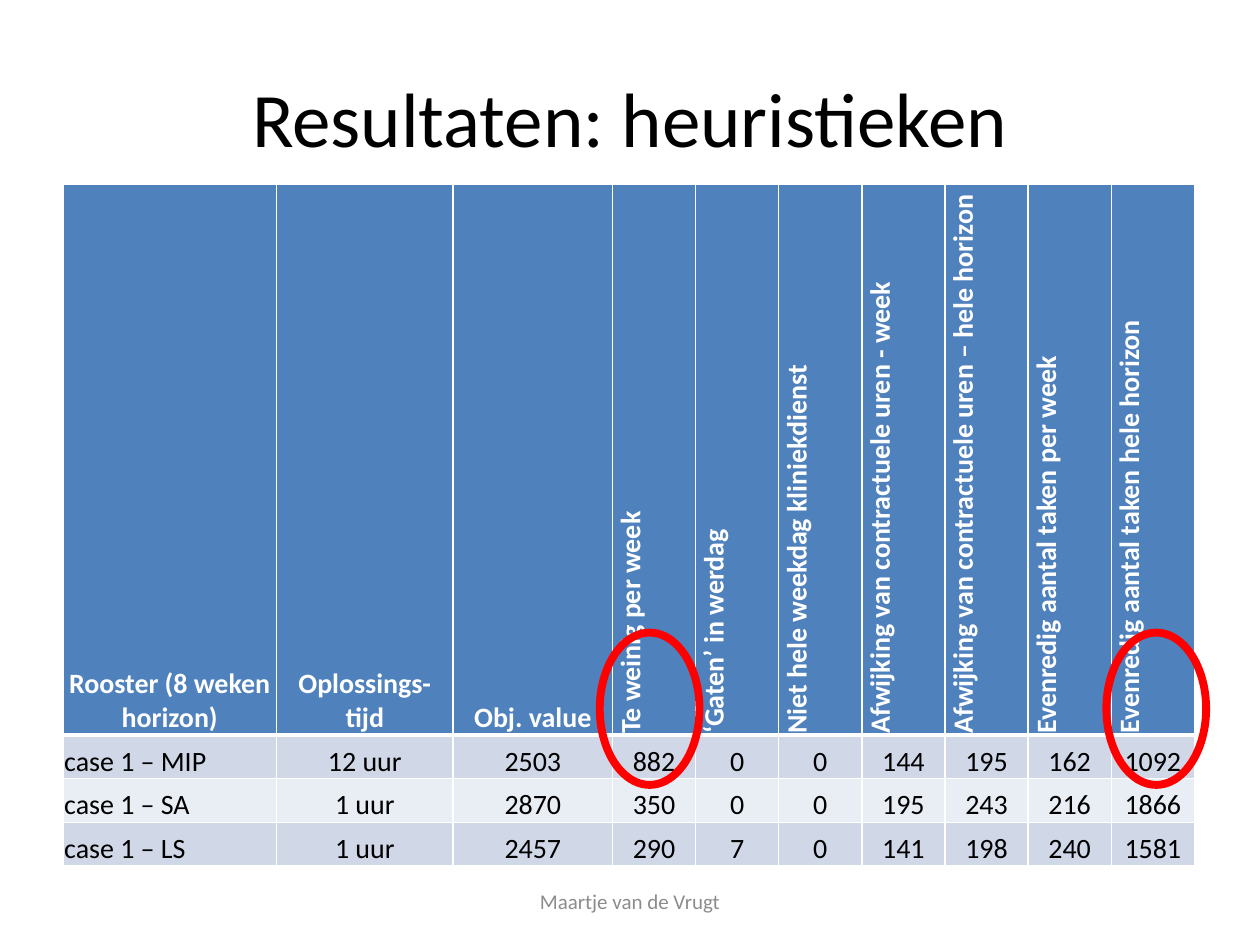
from dataclasses import dataclass

from lxml.etree import SubElement
from pptx import Presentation
from pptx.dml.color import RGBColor
from pptx.enum.shapes import MSO_SHAPE
from pptx.enum.text import MSO_ANCHOR, PP_ALIGN
from pptx.oxml.ns import qn
from pptx.util import Pt

FONT = "Calibri"
BLACK, WHITE, GREY, RED = "000000", "FFFFFF", "8C8C8C", "FF0000"
HEADER_FILL, BAND_FILLS = "4F81BD", ("D0D8E8", "E9EDF4")
THIN, THICK = 1, 3


@dataclass
class Box:
    left: float
    top: float
    width: float
    height: float

    def lengths(self) -> tuple:
        return Pt(self.left), Pt(self.top), Pt(self.width), Pt(self.height)


@dataclass
class Column:
    heading: str
    width: float
    values: tuple
    vertical: bool = False


def criterion(heading: str, *values: str) -> Column:
    return Column(heading, 47.52, values, vertical=True)


COLUMNS = [
    Column("Rooster (8 weken horizon)", 122, ("case 1 – MIP", "case 1 – SA", "case 1 – LS")),
    Column("Oplossings- tijd", 101, ("12 uur", "1 uur", "1 uur")),
    Column("Obj. value", 91, ("2503", "2870", "2457")),
    criterion("Te weinig per week", "882", "350", "290"),
    criterion("‘Gaten’ in werdag", "0", "0", "7"),
    criterion("Niet hele weekdag kliniekdienst", "0", "0", "0"),
    criterion("Afwijking van contractuele uren - week", "144", "195", "141"),
    criterion("Afwijking van contractuele uren – hele horizon", "195", "243", "198"),
    criterion("Evenredig aantal taken per week", "162", "216", "240"),
    criterion("Evenredig aantal taken hele horizon", "1092", "1866", "1581"),
]
ROW_HEIGHTS = [260, 25, 25, 25]
TABLE_BOX = Box(36, 105.5, sum(column.width for column in COLUMNS), sum(ROW_HEIGHTS))
HIGHLIGHTS = [Box(left, 361.5, 57, 87) for left in (342.7, 632.2)]


def color(hex_code: str) -> RGBColor:
    return RGBColor.from_string(hex_code)


def write(frame, text: str, size: float, hex_code: str, align, bold: bool = False) -> None:
    paragraph = frame.paragraphs[0]
    paragraph.alignment = align
    run = paragraph.add_run()
    run.text = text
    for attribute, value in {"name": FONT, "size": Pt(size), "bold": bold}.items():
        setattr(run.font, attribute, value)
    run.font.color.rgb = color(hex_code)


def set_borders(cell, widths: dict) -> None:
    properties = cell._tc.get_or_add_tcPr()
    for side, width in widths.items():
        line = SubElement(properties, qn(f"a:ln{side}"), w=str(Pt(width)))
        SubElement(SubElement(line, qn("a:solidFill")), qn("a:srgbClr"), val=WHITE)


def fill_cell(cell, column: Column, row: int, is_label: bool) -> None:
    header = row == 0
    upright = header and column.vertical
    set_borders(cell, {
        "L": THIN,
        "R": THIN,
        "T": THICK if row == 1 else THIN,
        "B": THICK if header else THIN,
    })
    cell.fill.solid()
    cell.fill.fore_color.rgb = color(HEADER_FILL if header else BAND_FILLS[(row - 1) % 2])
    cell_format = {
        "margin_left": Pt(0.72),
        "margin_top": Pt(0.72),
        "margin_right": Pt(0.72),
        "margin_bottom": Pt(5.67 if upright else 0),
        "vertical_anchor": MSO_ANCHOR.MIDDLE if upright else MSO_ANCHOR.BOTTOM,
    }
    for attribute, value in cell_format.items():
        setattr(cell, attribute, value)
    if upright:
        cell._tc.get_or_add_tcPr().set("vert", "vert270")
    left_aligned = upright or (is_label and not header)
    write(cell.text_frame, column.heading if header else column.values[row - 1], 16,
          WHITE if header else BLACK,
          PP_ALIGN.LEFT if left_aligned else PP_ALIGN.CENTER, bold=header)


def add_results(slide) -> None:
    table = slide.shapes.add_table(len(ROW_HEIGHTS), len(COLUMNS), *TABLE_BOX.lengths()).table
    for row, height in enumerate(ROW_HEIGHTS):
        table.rows[row].height = Pt(height)
    for index, column in enumerate(COLUMNS):
        table.columns[index].width = Pt(column.width)
        for row in range(len(ROW_HEIGHTS)):
            fill_cell(table.cell(row, index), column, row, is_label=index == 0)


def add_highlight(slide, box: Box) -> None:
    ring = slide.shapes.add_shape(MSO_SHAPE.OVAL, *box.lengths())
    ring.shadow.inherit = False
    ring.fill.background()
    ring.line.color.rgb = color(RED)
    ring.line.width = Pt(4.5)


def main() -> None:
    presentation = Presentation()
    presentation.slide_width, presentation.slide_height = Pt(720), Pt(540)
    slide = presentation.slides.add_slide(presentation.slide_layouts[5])

    # Title
    title = slide.shapes.title
    title.left, title.top, title.width, title.height = Box(36, 21.6, 648, 90).lengths()
    title.text_frame.vertical_anchor = MSO_ANCHOR.MIDDLE
    write(title.text_frame, "Resultaten: heuristieken", 44, BLACK, PP_ALIGN.CENTER)

    # Results table
    add_results(slide)

    # Author line
    author = slide.shapes.add_textbox(*Box(246, 500.5, 228, 28.75).lengths()).text_frame
    author.word_wrap = True
    author.vertical_anchor = MSO_ANCHOR.MIDDLE
    write(author, "Maartje van de Vrugt", 12, GREY, PP_ALIGN.CENTER)

    # Rings around the notable values
    for box in HIGHLIGHTS:
        add_highlight(slide, box)

    presentation.save("out.pptx")


if __name__ == "__main__":
    main()
